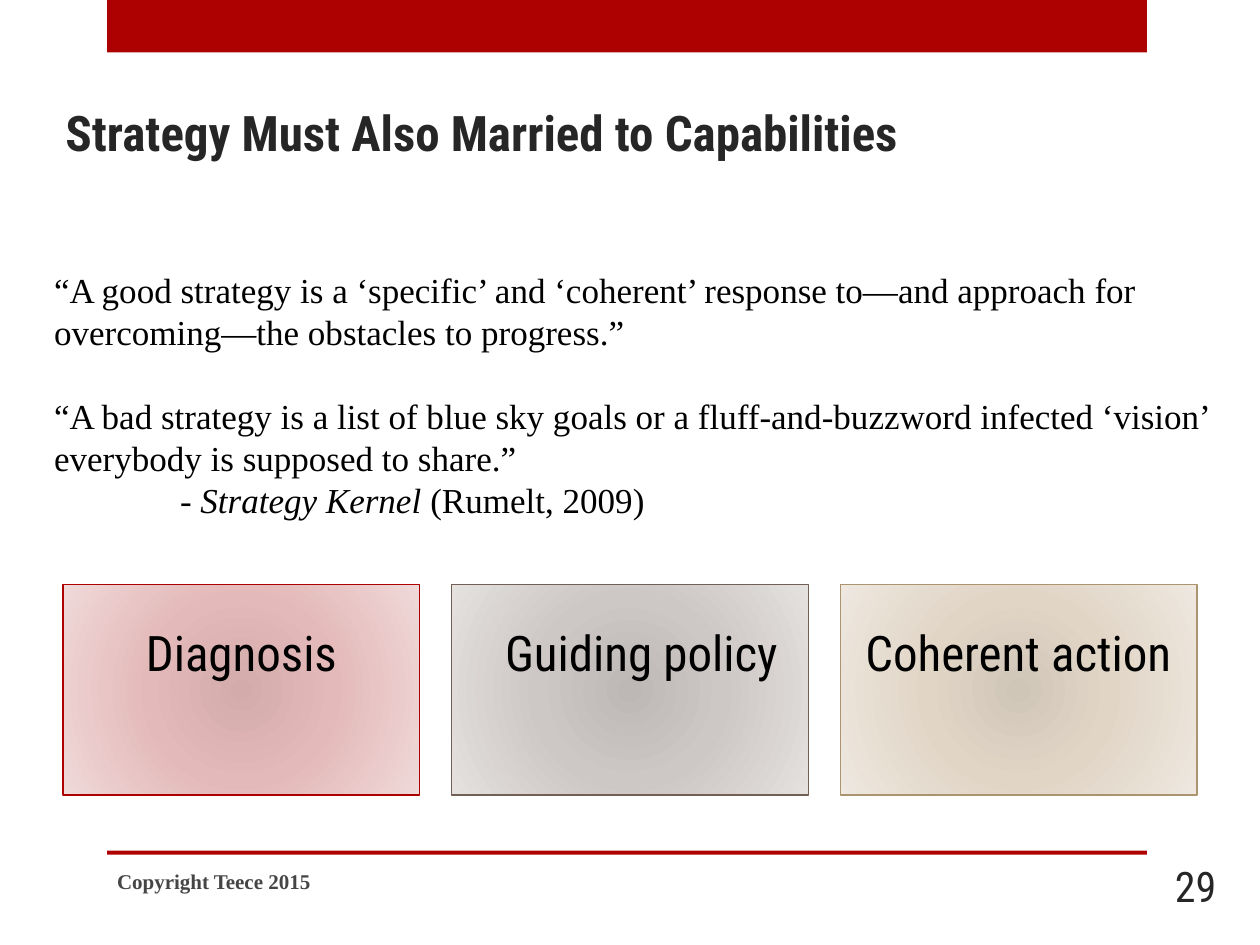
from dataclasses import dataclass

from lxml import etree
from pptx import Presentation
from pptx.dml.color import RGBColor
from pptx.enum.shapes import MSO_SHAPE
from pptx.enum.text import MSO_ANCHOR, PP_ALIGN
from pptx.oxml.ns import qn
from pptx.util import Cm, Pt

RECTANGLE = MSO_SHAPE.RECTANGLE
TOP, MIDDLE, BOTTOM = MSO_ANCHOR.TOP, MSO_ANCHOR.MIDDLE, MSO_ANCHOR.BOTTOM
LEFT, CENTER, RIGHT = PP_ALIGN.LEFT, PP_ALIGN.CENTER, PP_ALIGN.RIGHT


@dataclass(frozen=True)
class Theme:
    """Colours, fonts and type sizes of the slide."""
    accent: str = "AD0101"
    ink: str = "000000"
    heading: str = "262626"
    muted: str = "454545"
    sans: str = "Roboto Condensed"
    serif: str = "Times New Roman"
    heading_size: int = 28
    number_size: int = 24
    body_size: int = 20
    footer_size: int = 12


THEME = Theme()

QUOTES = [
    "“A good strategy is a ‘specific’ and ‘coherent’ response to—and approach for "
    "overcoming—the obstacles to progress.”",
    "“A bad strategy is a list of blue sky goals or a fluff-and-buzzword infected "
    "‘vision’ everybody is supposed to share.”",
]
SOURCE = ("- Strategy Kernel ", "(Rumelt, 2009)")

@dataclass(frozen=True)
class Card:
    """Label, line colour, gradient colours and label placement of a card."""
    label: str
    line: str
    gradient: tuple
    label_shift: float = 0
    label_width: float = 7.19


CARDS = [
    Card("Diagnosis", "AD0101", ("D3ABAB", "E4B9B9", "F0D9D9")),
    Card("Guiding policy", "726056", ("BDB8B6", "CDC7C5", "E4E1DF"), 0.23),
    Card("Coherent action", "AC956E", ("D0C6B8", "E1D5C6", "EEE8E0"), -0.32, 7.82),
]


def style_font(font, size, name, color, bold=False):
    """Set the look of a font."""
    font.size, font.name, font.bold = Pt(size), name, bold
    font.color.rgb = RGBColor.from_string(color)


def add_text(slide, box, text, size, name, color, bold=False, align=LEFT, anchor=MIDDLE):
    """Add a wrapped one-paragraph text box and return its text frame."""
    frame = slide.shapes.add_textbox(*map(Cm, box)).text_frame
    frame.word_wrap = True
    frame.vertical_anchor = anchor
    frame.text = text
    paragraph = frame.paragraphs[0]
    paragraph.alignment = align
    style_font(paragraph.runs[0].font, size, name, color, bold)
    return frame


def add_rectangle(slide, box):
    """Add a rectangle without shadow."""
    shape = slide.shapes.add_shape(RECTANGLE, *map(Cm, box))
    shape.shadow.inherit = False
    return shape


def add_bar(slide, box):
    """Add a solid accent bar."""
    shape = add_rectangle(slide, box)
    shape.fill.solid()
    shape.fill.fore_color.rgb = RGBColor.from_string(THEME.accent)
    shape.line.fill.background()


def set_radial_gradient(shape, colors):
    """Fill a shape with a gradient running outwards from its centre."""
    shape.fill.gradient()
    gradient = shape.fill._xPr.find(qn("a:gradFill"))
    for child in list(gradient):
        gradient.remove(child)
    stops = etree.SubElement(gradient, qn("a:gsLst"))
    for position, color in zip((0, 45, 100), colors):
        stop = etree.SubElement(stops, qn("a:gs"), pos=str(position * 1000))
        etree.SubElement(stop, qn("a:srgbClr"), val=color)
    circle = etree.SubElement(gradient, qn("a:path"), path="circle")
    etree.SubElement(circle, qn("a:fillToRect"), {side: "100000" for side in "ltrb"})


def add_quotes(slide, box):
    """Add the quotations and their indented source."""
    frame = add_text(slide, box, QUOTES[0], THEME.body_size, THEME.serif, THEME.ink, anchor=TOP)
    frame.margin_top = Cm(1.17)
    second = frame.add_paragraph()
    second.text = QUOTES[1]
    second.space_before = Pt(24)
    source = frame.add_paragraph()
    source._p.get_or_add_pPr().set("marL", str(Cm(2.54)))
    for text in SOURCE:
        source.add_run().text = text
    for paragraph in frame.paragraphs:
        paragraph.line_spacing = Pt(24)
        for run in paragraph.runs:
            style_font(run.font, THEME.body_size, THEME.serif, THEME.ink)
    source.runs[0].font.italic = True


def add_card(slide, box, card):
    """Add one gradient card with its label."""
    left, top, _, _ = box
    shape = add_rectangle(slide, box)
    set_radial_gradient(shape, card.gradient)
    shape.line.color.rgb = RGBColor.from_string(card.line)
    shape.line.width = Pt(0.75)
    label_box = (left + card.label_shift, top + 0.64, card.label_width, 1.45)
    add_text(slide, label_box, card.label, THEME.heading_size, THEME.sans, THEME.ink,
             align=CENTER, anchor=TOP)


def add_cards(slide, box, gap=0.64):
    """Spread the cards evenly over a box."""
    left, top, width, height = box
    card_width = (width - gap * (len(CARDS) - 1)) / len(CARDS)
    for index, card in enumerate(CARDS):
        card_left = left + index * (card_width + gap)
        add_card(slide, (card_left, top, card_width, height), card)


def add_footer(slide, box):
    """Add the rule, the copyright line and the slide number."""
    left, top, width, _ = box
    add_bar(slide, (left, top, width, 0.08))
    add_text(slide, (left - 0.05, top + 0.1, 13.54, 1.02), "Copyright Teece 2015",
             THEME.footer_size, THEME.serif, THEME.muted, bold=True)
    add_text(slide, (left + width - 0.46, top + 0.2, 2.11, 1.02), "29",
             THEME.number_size, THEME.sans, THEME.heading, align=RIGHT)


def main():
    """Build and save the slide."""
    presentation = Presentation()
    presentation.slide_width, presentation.slide_height = Cm(25.4), Cm(19.05)
    slide = presentation.slides.add_slide(presentation.slide_layouts[6])
    add_bar(slide, (2.16, 0, 20.96, 1.06))
    add_text(slide, (1.07, 0.76, 24.33, 2.62), "Strategy Must Also Married to Capabilities",
             THEME.heading_size, THEME.sans, THEME.heading, bold=True, anchor=BOTTOM)
    add_quotes(slide, (0.84, 4.24, 24.13, 7.42))
    add_cards(slide, (1.27, 11.79, 22.86, 4.24))
    add_footer(slide, (2.16, 17.15, 20.96, 1.22))
    presentation.save("out.pptx")


if __name__ == "__main__":
    main()
